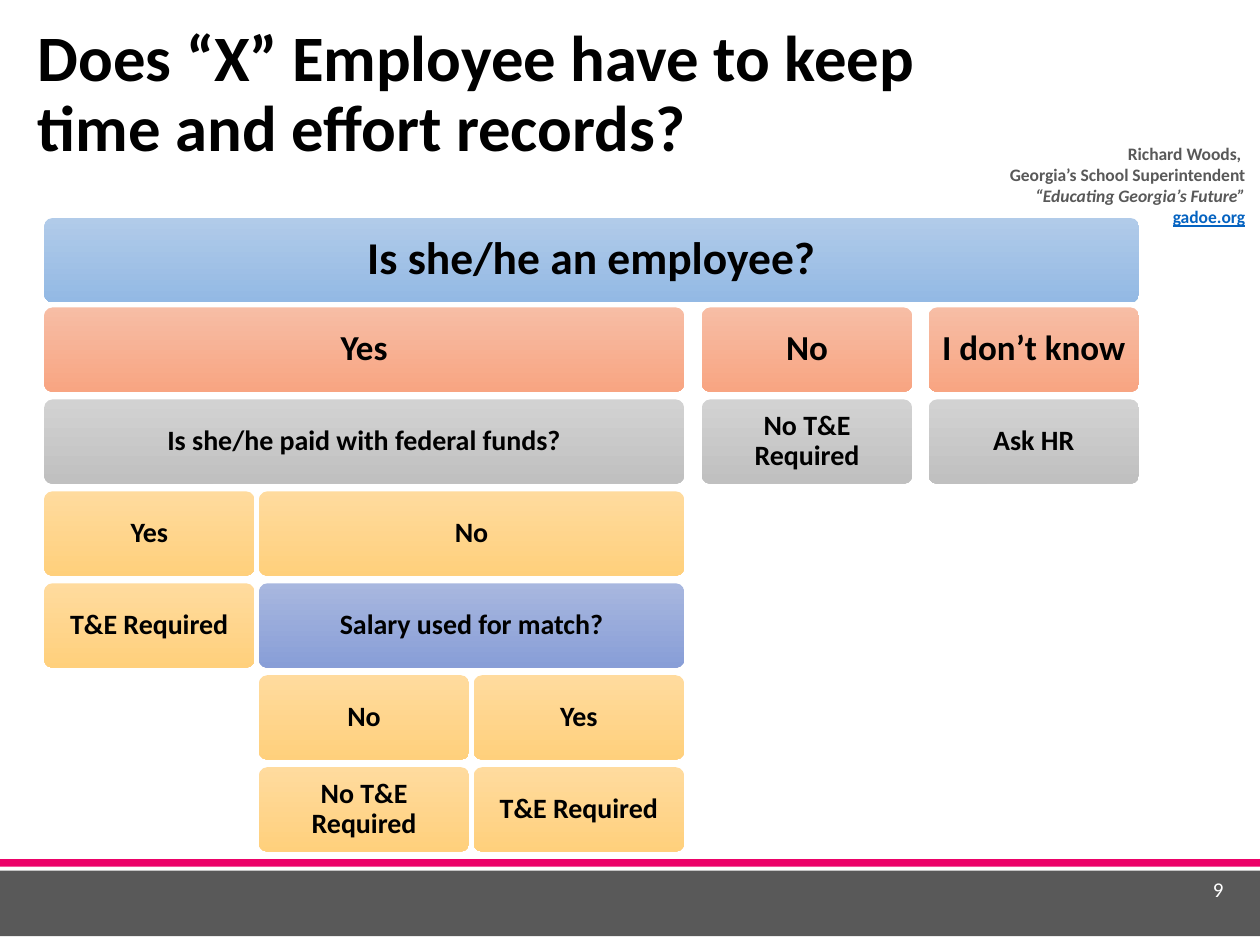
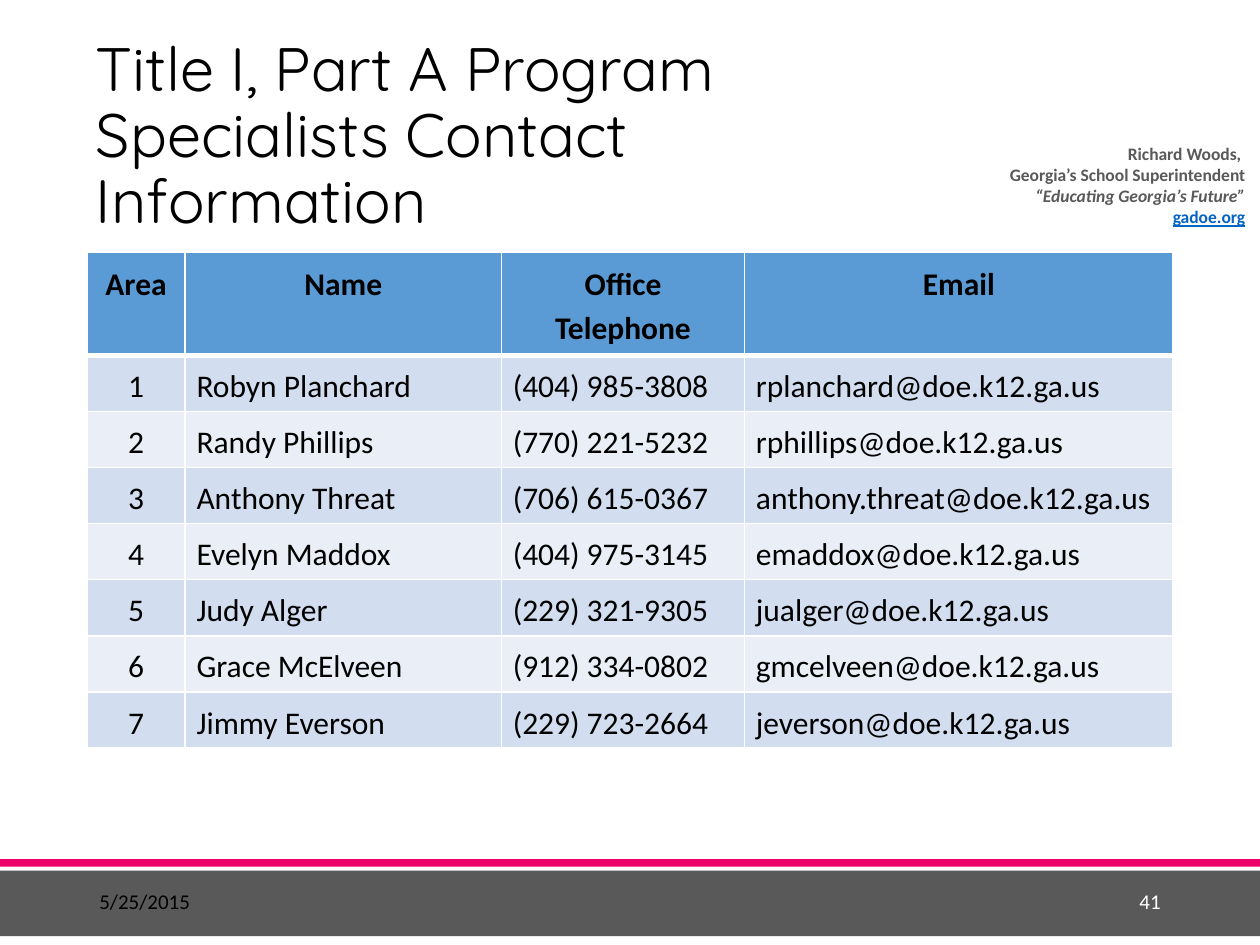
import dataclasses

import pptx
import pptx.dml.color
import pptx.enum.shapes
import pptx.enum.text
import pptx.oxml
import pptx.oxml.ns
import pptx.util

ALIGN = pptx.enum.text.PP_ALIGN
ANCHOR = pptx.enum.text.MSO_ANCHOR
SHAPE = pptx.enum.shapes.MSO_SHAPE


@dataclasses.dataclass(frozen=True)
class Theme:
    body_font: str = "Calibri"
    display_font: str = "Quicksand"
    ink: str = "000000"
    paper: str = "FFFFFF"
    footer_band: str = "595959"
    accent: str = "EC0269"
    link: str = "0563C1"
    header: str = "5B9BD5"
    stripes: tuple = ("D2DEEF", "EAEFF7")
    # Top and bottom colours of the decision boxes
    blue: tuple = ("B1CBE9", "93B9E4")
    coral: tuple = ("F7BDA5", "F8A582")
    gray: tuple = ("D2D2D2", "C0C0C0")
    gold: tuple = ("FFDB9E", "FFD07C")
    indigo: tuple = ("A8B7DF", "889ED7")
    credit_size: int = 10
    footer_size: int = 12
    answer_size: int = 16
    table_size: int = 18
    branch_size: int = 20
    question_size: int = 26


THEME = Theme()
SUPERINTENDENT = ("Richard Woods, ", "Georgia’s School Superintendent",
                  "“Educating Georgia’s Future”", "gadoe.org")

# Decision grid, in percent of the slide
COLUMN_WIDTH = 16.7
COLUMN_LEFTS = (3.5, 20.55, 37.6, 55.7, 73.7)
ROW_HEIGHT, ROW_PITCH = 8.93, 9.73
ROW_TOPS = [23.07] + [32.53 + ROW_PITCH * step for step in range(6)]

# Row, first column, last column, wording, colours, type size
DECISIONS = (
    (0, 0, 4, "Is she/he an employee?", THEME.blue, THEME.question_size),
    (1, 0, 2, "Yes", THEME.coral, THEME.branch_size),
    (1, 3, 3, "No", THEME.coral, THEME.branch_size),
    (1, 4, 4, "I don’t know", THEME.coral, THEME.branch_size),
    (2, 0, 2, "Is she/he paid with federal funds?", THEME.gray, THEME.answer_size),
    (2, 3, 3, "No T&E Required", THEME.gray, THEME.answer_size),
    (2, 4, 4, "Ask HR", THEME.gray, THEME.answer_size),
    (3, 0, 0, "Yes", THEME.gold, THEME.answer_size),
    (3, 1, 2, "No", THEME.gold, THEME.answer_size),
    (4, 0, 0, "T&E Required", THEME.gold, THEME.answer_size),
    (4, 1, 2, "Salary used for match?", THEME.indigo, THEME.answer_size),
    (5, 1, 1, "No", THEME.gold, THEME.answer_size),
    (5, 2, 2, "Yes", THEME.gold, THEME.answer_size),
    (6, 1, 1, "No T&E Required", THEME.gold, THEME.answer_size),
    (6, 2, 2, "T&E Required", THEME.gold, THEME.answer_size),
)

CONTACTS = (
    ("Area", "Name", "Office Telephone", "Email"),
    ("1", "Robyn Planchard", "(404) 985-3808", "rplanchard@doe.k12.ga.us"),
    ("2", "Randy Phillips", "(770) 221-5232", "rphillips@doe.k12.ga.us"),
    ("3", "Anthony Threat", "(706) 615-0367", "anthony.threat@doe.k12.ga.us"),
    ("4", "Evelyn Maddox", "(404) 975-3145", "emaddox@doe.k12.ga.us"),
    ("5", "Judy Alger", "(229) 321-9305", "jualger@doe.k12.ga.us"),
    ("6", "Grace McElveen", "(912) 334-0802", "gmcelveen@doe.k12.ga.us"),
    ("7", "Jimmy Everson", "(229) 723-2664", "jeverson@doe.k12.ga.us"),
)
CONTACT_COLUMNS = (7.8, 25.1, 19.3, 34)
HEADER_ROW, CONTACT_ROW = 10.93, 5.87


def rgb(color):
    return pptx.dml.color.RGBColor.from_string(color)


class Deck:
    """Holds the style and the current slide; lengths are percent of the slide."""

    def __init__(self, theme):
        self.theme = theme
        self.presentation = pptx.Presentation()
        self.presentation.slide_width = pptx.util.Inches(10)
        self.presentation.slide_height = pptx.util.Inches(7.5)
        self.slide = None

    def across(self, share):
        return pptx.util.Emu(round(self.presentation.slide_width * share / 100))

    def down(self, share):
        return pptx.util.Emu(round(self.presentation.slide_height * share / 100))

    def area(self, left, top, width, height):
        return self.across(left), self.down(top), self.across(width), self.down(height)

    def style(self, frame, size, color=None, bold=False, align=ALIGN.LEFT,
              spacing=1.0, font=None):
        for paragraph in frame.paragraphs:
            paragraph.alignment = align
            paragraph.line_spacing = spacing
            for run in paragraph.runs:
                run.font.name = font or self.theme.body_font
                run.font.size = pptx.util.Pt(size)
                run.font.bold = bold
                run.font.color.rgb = rgb(color or self.theme.ink)

    def start_slide(self):
        """Add a slide with the shared bands and superintendent credit."""
        self.slide = self.presentation.slides.add_slide(
            self.presentation.slide_layouts[5])
        self.band((0, 92.13, 100, 6.93), self.theme.footer_band)
        self.band((0, 90.93, 100, 0.8), self.theme.accent)
        credit = self.text((78.4, 14.93, 21.4, 9.33), "\n".join(SUPERINTENDENT),
                           self.theme.credit_size, color=self.theme.footer_band,
                           bold=True, align=ALIGN.RIGHT)
        motto, site = credit.paragraphs[2:]
        motto.runs[0].font.italic = True
        site.runs[0].font.underline = True
        site.runs[0].font.color.rgb = rgb(self.theme.link)

    def band(self, area, color):
        stripe = self.slide.shapes.add_shape(SHAPE.RECTANGLE, *self.area(*area))
        stripe.shadow.inherit = False
        stripe.fill.solid()
        stripe.fill.fore_color.rgb = rgb(color)
        stripe.line.fill.background()

    def title(self, area, wording, size, **looks):
        heading = self.slide.shapes.title
        heading.left, heading.top, heading.width, heading.height = self.area(*area)
        frame = heading.text_frame
        frame.text = wording
        frame.word_wrap = True
        frame.auto_size = pptx.enum.text.MSO_AUTO_SIZE.NONE
        frame.vertical_anchor = ANCHOR.MIDDLE
        self.style(frame, size, spacing=0.9, **looks)

    def text(self, area, wording, size, **looks):
        frame = self.slide.shapes.add_textbox(*self.area(*area)).text_frame
        frame.text = wording
        frame.word_wrap = True
        frame.vertical_anchor = ANCHOR.MIDDLE
        self.style(frame, size, **looks)
        return frame

    def page_number(self, area, number):
        self.text(area, number, self.theme.footer_size,
                  color=self.theme.paper, align=ALIGN.RIGHT)

    def decision(self, row, first, last, wording, colors, size):
        """Add a box that spans grid columns first to last."""
        left = COLUMN_LEFTS[first]
        width = COLUMN_LEFTS[last] + COLUMN_WIDTH - left
        box = self.slide.shapes.add_shape(
            SHAPE.ROUNDED_RECTANGLE,
            *self.area(left, ROW_TOPS[row], width, ROW_HEIGHT))
        box.adjustments[0] = 0.1
        box.shadow.inherit = False
        box.line.fill.background()
        box.fill.gradient()
        box.fill.gradient_angle = 270
        for stop, color in zip(box.fill.gradient_stops, colors):
            stop.color.rgb = rgb(color)
        frame = box.text_frame
        frame.text = wording
        frame.word_wrap = True
        frame.vertical_anchor = ANCHOR.MIDDLE
        inset = pptx.util.Pt(size * 0.3)
        frame.margin_left = frame.margin_right = inset
        frame.margin_top = frame.margin_bottom = inset
        self.style(frame, size, bold=True, align=ALIGN.CENTER, spacing=0.9)

    def table(self, left, top, records, columns, header_height, row_height):
        heights = [header_height] + [row_height] * (len(records) - 1)
        grid = self.slide.shapes.add_table(
            len(records), len(columns),
            *self.area(left, top, sum(columns), sum(heights))).table
        for column, width in zip(grid.columns, columns):
            column.width = self.across(width)
        for row, height in zip(grid.rows, heights):
            row.height = self.down(height)
        for row, record in enumerate(records):
            for column, wording in enumerate(record):
                self.table_cell(grid.cell(row, column), wording, row, column)

    def table_cell(self, cell, wording, row, column):
        is_header = row == 0
        cell.text = wording
        side, edge = (0.12, 0.06) if is_header else (0.09, 0.05)
        cell.margin_left = cell.margin_right = pptx.util.Inches(side)
        cell.margin_top = cell.margin_bottom = pptx.util.Inches(edge)
        centred = is_header or column == 0
        self.style(cell.text_frame, self.theme.table_size, bold=is_header,
                   align=ALIGN.CENTER if centred else ALIGN.LEFT, spacing=1.15)
        self.borders(cell, top=3 if row == 1 else 1, bottom=3 if is_header else 1)
        cell.fill.solid()
        cell.fill.fore_color.rgb = rgb(
            self.theme.header if is_header else self.theme.stripes[(row - 1) % 2])

    def borders(self, cell, top, bottom):
        properties = cell._tc.get_or_add_tcPr()
        namespace = pptx.oxml.ns.nsdecls("a")
        for edge, points in (("lnL", 1), ("lnR", 1), ("lnT", top), ("lnB", bottom)):
            properties.append(pptx.oxml.parse_xml(
                f'<a:{edge} {namespace} w="{pptx.util.Pt(points)}"><a:solidFill>'
                f'<a:srgbClr val="{self.theme.paper}"/></a:solidFill></a:{edge}>'))


def build_decision_slide(deck):
    deck.start_slide()
    deck.title((2, 1.6, 81.8, 16.93),
               "Does “X” Employee have to keep time and effort records?",
               37, bold=True)
    deck.page_number((92.8, 91.47, 5.3, 5.33), "9")
    for decision in DECISIONS:
        deck.decision(*decision)


def build_contact_slide(deck):
    deck.start_slide()
    deck.title((6.6, 4.93, 69.1, 19.33),
               "Title I, Part A Program Specialists Contact Information",
               35, font=deck.theme.display_font)
    deck.table(6.9, 26.67, CONTACTS, CONTACT_COLUMNS, HEADER_ROW, CONTACT_ROW)
    deck.text((6.9, 92.67, 22.5, 5.33), "5/25/2015", deck.theme.footer_size)
    deck.page_number((70.6, 92.67, 22.5, 5.33), "41")


def main():
    deck = Deck(THEME)
    build_decision_slide(deck)
    build_contact_slide(deck)
    deck.presentation.save("out.pptx")


if __name__ == "__main__":
    main()
